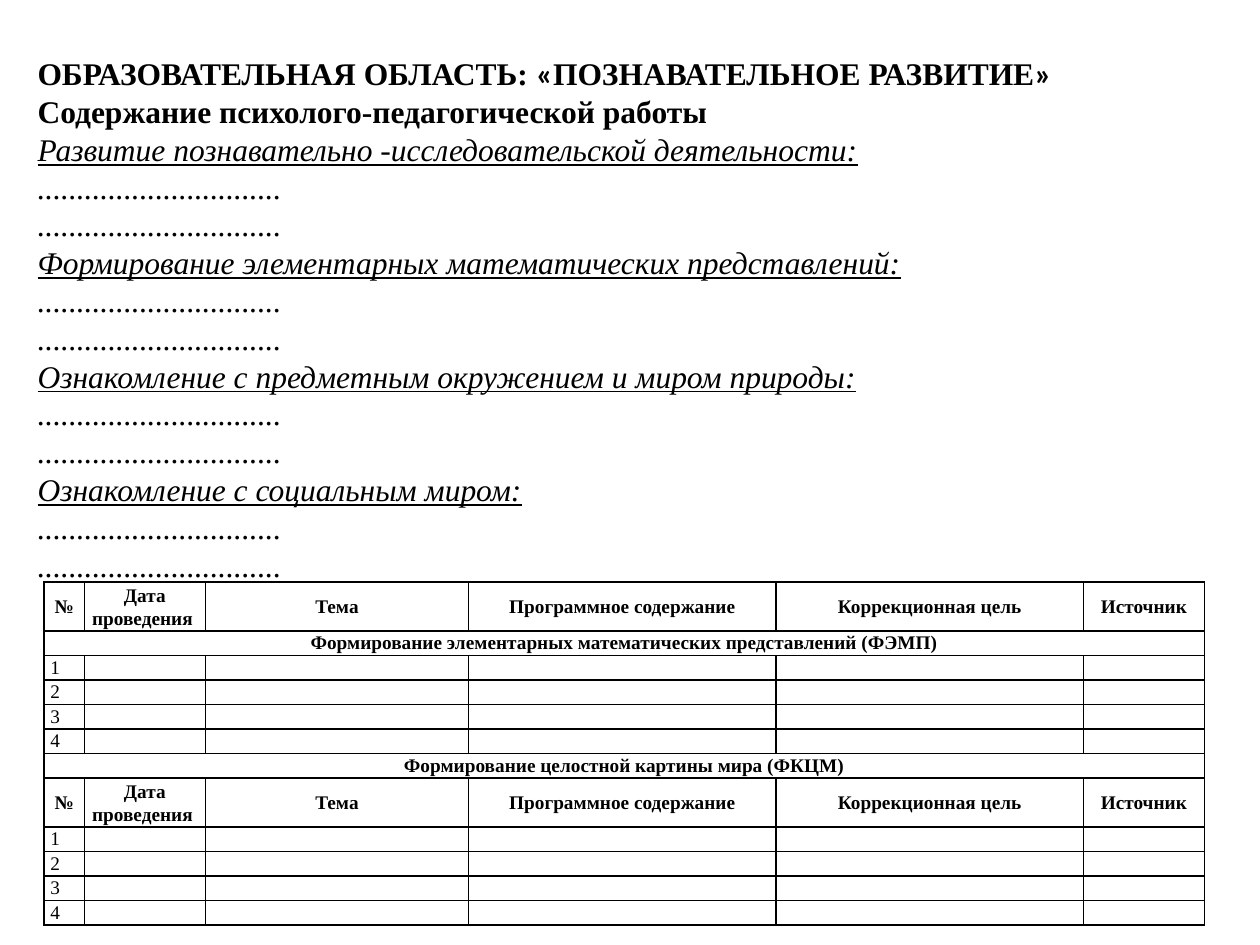
from lxml import etree
from pptx import Presentation, util as u
from pptx.dml.color import RGBColor
from pptx.enum import text
from pptx.oxml import ns

BLACK = RGBColor(0, 0, 0)
FONT = "Times New Roman"
QUOTE_FONT = "Calibri"
CELL_SIZE = u.Pt(11)

HEADING = [("ОБРАЗОВАТЕЛЬНАЯ ОБЛАСТЬ: ", FONT), ("«", QUOTE_FONT),
           ("ПОЗНАВАТЕЛЬНОЕ РАЗВИТИЕ", FONT), ("»", QUOTE_FONT)]
SUBHEADING = "Содержание психолого-педагогической работы"
TOPICS = ["Развитие познавательно -исследовательской деятельности:",
          "Формирование элементарных математических представлений:",
          "Ознакомление с предметным окружением и миром природы:",
          "Ознакомление с социальным миром:"]
DOTS = "." * 31

COLUMN_TITLES = ["№", "Дата проведения ", "Тема", "Программное содержание",
                 "Коррекционная цель", "Источник"]
COLUMN_WIDTHS = [0.32, 0.96, 2.09, 2.44, 2.44, 0.96]
LESSONS = [[str(number)] for number in range(1, 5)]
SECTION_MATH = ["Формирование элементарных математических представлений (ФЭМП)"]
SECTION_WORLD = ["Формирование целостной картины мира (ФКЦМ)"]
# Each row: its kind and its cell texts
PLAN_ROWS = ([("header", COLUMN_TITLES), ("section", SECTION_MATH)]
             + [("lesson", lesson) for lesson in LESSONS]
             + [("section", SECTION_WORLD), ("header", COLUMN_TITLES)]
             + [("lesson", lesson) for lesson in LESSONS])
ROW_UNITS = {"header": 2, "section": 1, "lesson": 1}


def format_run(run, size, name=FONT, bold=False, italic=False, underline=False):
    font = run.font
    font.size, font.name = size, name
    font.bold, font.italic, font.underline = bold, italic, underline
    font.color.rgb = BLACK


def add_outline(slide, left, top, width, height):
    """Heading, subheading and the topics with dotted lines to fill in."""
    frame = slide.shapes.add_textbox(left, top, width, height).text_frame
    frame.word_wrap = False
    frame.auto_size = text.MSO_AUTO_SIZE.SHAPE_TO_FIT_TEXT
    frame.vertical_anchor = text.MSO_ANCHOR.MIDDLE
    size = u.Pt(18)

    lines = [SUBHEADING]
    for topic in TOPICS:
        lines += [topic, DOTS, DOTS]
    frame.text = "\n".join([""] + lines)

    for part, name in HEADING:
        run = frame.paragraphs[0].add_run()
        run.text = part
        format_run(run, size, name, bold=True)
    for paragraph, line in zip(frame.paragraphs[1:], lines):
        is_subheading = line == SUBHEADING
        format_run(paragraph.runs[0], size, bold=is_subheading,
                   italic=not is_subheading, underline=line in TOPICS)


def style_cell(cell, kind):
    cell.margin_left = cell.margin_right = u.Inches(0.05)
    cell.margin_top = cell.margin_bottom = 0
    if kind == "header":
        cell.vertical_anchor = text.MSO_ANCHOR.MIDDLE
    # Thin black borders go before the fill in the cell properties
    properties = cell._tc.get_or_add_tcPr()
    for side in ("lnL", "lnR", "lnT", "lnB"):
        line = etree.SubElement(properties, ns.qn(f"a:{side}"), w=str(u.Pt(1)))
        fill = etree.SubElement(line, ns.qn("a:solidFill"))
        etree.SubElement(fill, ns.qn("a:srgbClr"), val=str(BLACK))
    cell.fill.background()


def write_cell(cell, kind, content):
    paragraph = cell.text_frame.paragraphs[0]
    if not content:
        # An empty cell keeps the small size so that its row stays low
        etree.SubElement(paragraph._p, ns.qn("a:endParaRPr"),
                         sz=str(int(CELL_SIZE.pt * 100)))
        return
    paragraph.text = content
    paragraph.line_spacing = 1.06
    if kind != "lesson":
        paragraph.alignment = text.PP_ALIGN.CENTER
    format_run(paragraph.runs[0], CELL_SIZE, bold=kind != "lesson")


def add_plan_table(slide, left, top, width, height):
    """Lesson plan: two sections, each with four numbered lessons."""
    column_count = len(COLUMN_TITLES)
    table = slide.shapes.add_table(len(PLAN_ROWS), column_count,
                                   left, top, width, height).table
    table.first_row = table.horz_banding = False
    for column, share in zip(table.columns, COLUMN_WIDTHS):
        column.width = int(width * share / sum(COLUMN_WIDTHS))

    unit = height / sum(ROW_UNITS[kind] for kind, _ in PLAN_ROWS)
    for index, (kind, contents) in enumerate(PLAN_ROWS):
        table.rows[index].height = int(unit * ROW_UNITS[kind])
        if kind == "section":
            table.cell(index, 0).merge(table.cell(index, column_count - 1))
        padded = contents + [""] * (column_count - len(contents))
        for column, content in enumerate(padded):
            cell = table.cell(index, column)
            style_cell(cell, kind)
            write_cell(cell, kind, content)


def main():
    presentation = Presentation()
    presentation.slide_width = u.Inches(10)
    presentation.slide_height = u.Inches(7.5)
    slide = presentation.slides.add_slide(presentation.slide_layouts[6])
    add_outline(slide, u.Inches(0.2), u.Inches(0.36),
                u.Inches(8.33), u.Inches(4.34))
    add_plan_table(slide, u.Inches(0.35), u.Inches(4.62),
                   u.Inches(9.21), u.Inches(2.72))
    presentation.save("out.pptx")


if __name__ == "__main__":
    main()
